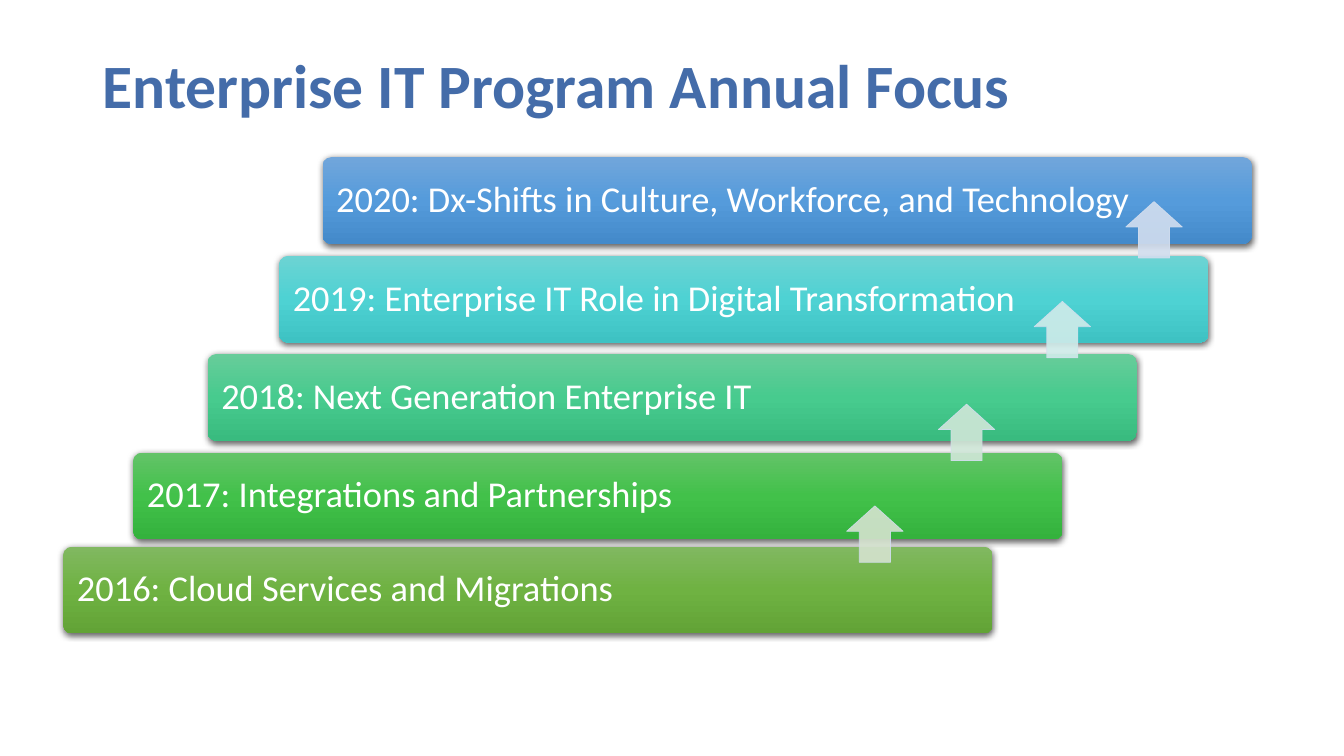
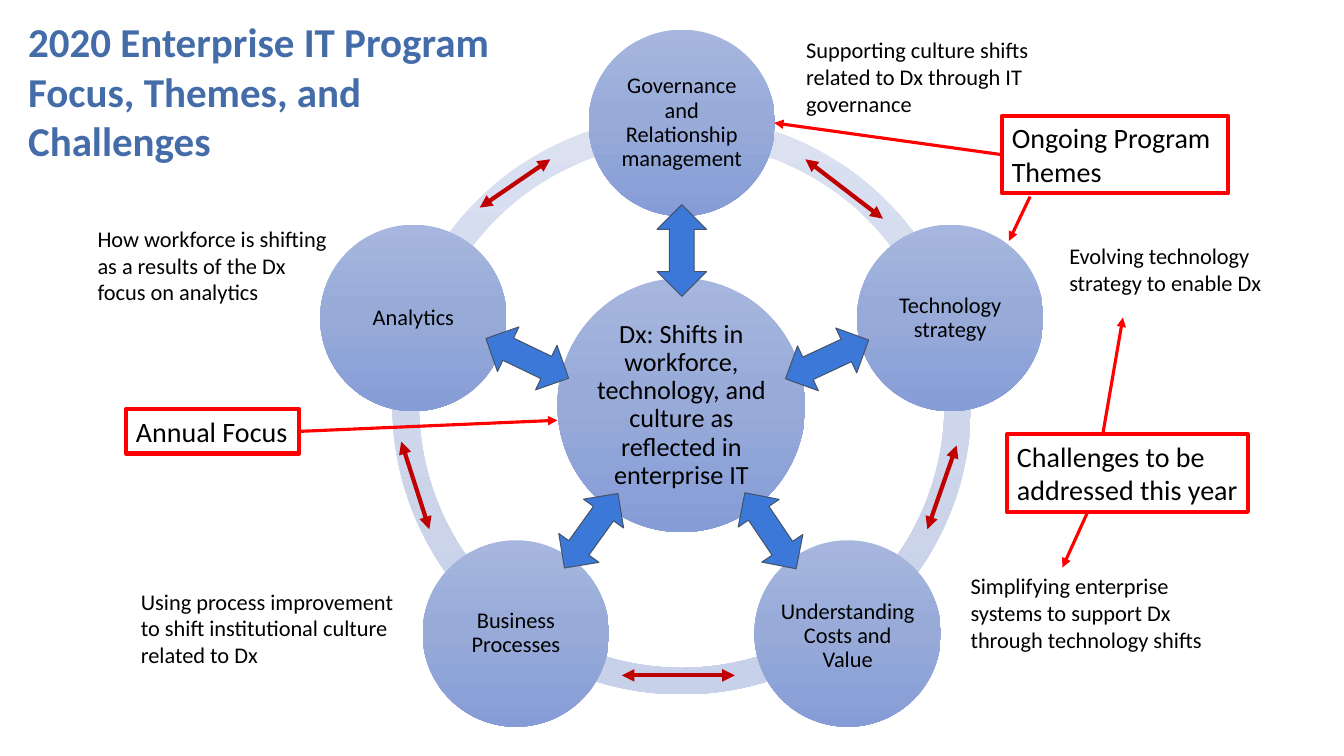
"""Build two slides on the enterprise IT program: annual focus, then themes and challenges."""
from dataclasses import dataclass
from math import cos, radians, sin
from typing import Any, NamedTuple, Optional

from lxml import etree
from pptx import Presentation
from pptx.dml.color import RGBColor
from pptx.enum.shapes import MSO_CONNECTOR, MSO_SHAPE
from pptx.enum.text import MSO_ANCHOR, PP_ALIGN
from pptx.oxml.ns import qn
from pptx.util import Pt

ROUNDED, OVAL, ARC = MSO_SHAPE.ROUNDED_RECTANGLE, MSO_SHAPE.OVAL, MSO_SHAPE.BLOCK_ARC
UP_ARROW, DOUBLE_ARROW = MSO_SHAPE.UP_ARROW, MSO_SHAPE.LEFT_RIGHT_ARROW
STRAIGHT = MSO_CONNECTOR.STRAIGHT
TOP, MIDDLE = MSO_ANCHOR.TOP, MSO_ANCHOR.MIDDLE
LEFT, CENTER = PP_ALIGN.LEFT, PP_ALIGN.CENTER
LEFT_SIDE, RIGHT_SIDE = 1, 3

Gradient = tuple[str, str, str]
Point = tuple[float, float]


@dataclass(frozen=True)
class Theme:
    """Colours and type sizes of the deck."""
    font: str = "Calibri"
    title: str = "446CA9"
    dark: str = "000000"
    light: str = "FFFFFF"
    ring: Gradient = ("DBE1F1", "CED6EB", "C7D1E9")
    circle: Gradient = ("A6B6DE", "97AAD8", "859CD6")
    spoke: str = "3C78D8"
    spoke_edge: str = "44546A"
    ring_arrow: str = "C00000"
    callout: str = "FF0000"
    step_edge: str = "D2DEEF"
    title_size: float = 44
    long_title_size: float = 29.3
    bar_size: float = 26
    callout_size: float = 20
    hub_size: float = 18.7
    body_size: float = 16


THEME = Theme()


class Frame(NamedTuple):
    """Left, top, width and height in points."""
    left: float
    top: float
    width: float
    height: float


@dataclass(frozen=True)
class TextStyle:
    """How a text is set inside its shape."""
    size: float
    color: str = THEME.dark
    bold: bool = False
    align: Any = LEFT
    anchor: Any = TOP
    spacing: float = 1.0
    inset_x: float = 7.2
    inset_y: float = 3.6
    wrap: bool = True


class Bar(NamedTuple):
    """One year of the staircase."""
    text: str
    left: float
    top: float
    colors: Gradient


class Step(NamedTuple):
    """An arrow leading up to the next year."""
    left: float
    top: float
    color: str


class Theme_(NamedTuple):
    """A program theme on the ring."""
    text: str
    label_width: float = 94.3
    label_drop: float = 0


class Spoke(NamedTuple):
    """A double arrow between the hub and a theme."""
    x: float
    y: float
    rotation: float


class Note(NamedTuple):
    """A free text beside a theme."""
    text: str
    frame: Frame


class Pointer(NamedTuple):
    """A callout arrow; side is the joined side of the box, if any."""
    start: Point
    end: Point
    side: Optional[int] = None


class Callout(NamedTuple):
    """A framed text with its arrows."""
    text: str
    frame: Frame
    pointers: list[Pointer]
    wrap: bool = True


BARS = [
    Bar("2020: Dx-Shifts in Culture, Workforce, and Technology", 230.4, 112.3, ("71A6DB", "559BDB", "448ACA")),
    Bar("2019: Enterprise IT Role in Digital Transformation", 199.4, 182.8, ("6CD3D3", "4ED2D3", "3EC2C3")),
    Bar("2018: Next Generation Enterprise IT", 148.3, 252.9, ("67CC9A", "47CB8E", "39BB7F")),
    Bar("2017: Integrations and Partnerships", 95.2, 323.3, ("63C368", "42C14A", "34B23D")),
    Bar("2016: Cloud Services and Migrations", 45.2, 390.5, ("81B861", "6FB242", "62A336")),
]
STEPS = [
    Step(804.2, 144, "D2DEEF"),
    Step(738.7, 215.3, "D0ECEA"),
    Step(670.3, 288.7, "D0E7D8"),
    Step(604.8, 361.4, "D5E3CF"),
]
RING_CENTER = (487, 289.4)
RING_SIZE, ORBIT, CIRCLE_SIZE = 413.3, 201.6, 133.2
ARC_START, ARC_SWEEP = 32.4, 43.2
HUB = Frame(398.2, 198.7, 177.1, 181.4)
HUB_LABEL = Frame(424.1, 225.4, 125.3, 128.2)
HUB_TEXT = "Dx: Shifts in workforce, technology, and culture as reflected in enterprise IT"
THEMES = [
    Theme_("Governance and Relationship management"),
    Theme_("Technology strategy"),
    Theme_("Understanding Costs and Value", 101.5, 2),
    Theme_("Business Processes"),
    Theme_("Analytics"),
]
RING_ARROWS: list[tuple[Point, Point]] = [
    ((575.3, 113.8), (630.7, 156.2)),
    ((683.3, 318.2), (662.4, 378)),
    ((342.7, 148.3), (393.1, 113.8)),
    ((286.6, 315.4), (306.7, 378)),
    ((444.2, 482.4), (524.9, 482.4)),
]
SPOKES = [
    Spoke(376.6, 256, 25.7),
    Spoke(487, 178.9, 90),
    Spoke(590.8, 256.7, 155),
    Spoke(550.4, 379.1, 236),
    Spoke(422.3, 379.1, 305.7),
]
NOTES = [
    Note("Evolving technology strategy to enable Dx", Frame(756.7, 169.2, 161.3, 57.6)),
    Note("Supporting culture shifts related to Dx through IT governance", Frame(568.8, 22.3, 187.9, 66.2)),
    Note("Simplifying enterprise systems to support Dx through technology shifts", Frame(686.2, 405.4, 203.8, 74.2)),
    Note("Using process improvement to shift institutional culture related to Dx", Frame(93.6, 416.2, 203.8, 66.2)),
    Note("How workforce is shifting as a results of the Dx focus on analytics", Frame(62.6, 157, 180.7, 72.7)),
]
CALLOUTS = [
    Callout("Ongoing Program Themes", Frame(715.7, 82.8, 161.3, 55.4), [
        Pointer((715.7, 110.5), (553, 87.8), LEFT_SIDE),
        Pointer((735.8, 140.4), (720.7, 172.1)),
    ]),
    Callout("Challenges to be addressed this year", Frame(719.3, 310.3, 172.1, 55.4), [
        Pointer((787.7, 310.3), (802.1, 226.8)),
        Pointer((776.9, 365.8), (758.9, 405.4)),
    ]),
    Callout("Annual Focus", Frame(90, 292.3, 123.8, 31.7), [
        Pointer((213.8, 308.2), (398.2, 300.2), RIGHT_SIDE),
    ], wrap=False),
]


def apply(target: Any, values: dict[str, Any]) -> None:
    """Set each named attribute on the target."""
    for name, value in values.items():
        setattr(target, name, value)


def add_node(parent: Any, tag: str, **attributes: Any) -> Any:
    """Append a DrawingML element."""
    return etree.SubElement(parent, qn(tag), {key: str(value) for key, value in attributes.items()})


def write(shape: Any, lines: list[str], style: TextStyle) -> None:
    """Fill a shape with one paragraph per line."""
    text_frame = shape.text_frame
    apply(text_frame, {
        "word_wrap": style.wrap, "vertical_anchor": style.anchor,
        "margin_left": Pt(style.inset_x), "margin_right": Pt(style.inset_x),
        "margin_top": Pt(style.inset_y), "margin_bottom": Pt(style.inset_y),
    })
    for index, line in enumerate(lines):
        para = text_frame.add_paragraph() if index else text_frame.paragraphs[0]
        apply(para, {"alignment": style.align, "line_spacing": style.spacing})
        span = para.add_run()
        span.text = line
        apply(span.font, {"name": THEME.font, "size": Pt(style.size), "bold": style.bold})
        span.font.color.rgb = RGBColor.from_string(style.color)


def add_text(page: Any, frame: Frame, lines: list[str], style: TextStyle) -> Any:
    """Add a text box."""
    box = page.shapes.add_textbox(*map(Pt, frame))
    write(box, lines, style)
    return box


def add_title(page: Any, frame: Frame, lines: list[str], size: float, anchor: Any, spacing: float) -> None:
    """Add the slide title."""
    add_text(page, frame, lines, TextStyle(size, THEME.title, True, anchor=anchor, spacing=spacing))


def add_shape(page: Any, kind: Any, frame: Frame, adjustments: tuple[float, ...] = ()) -> Any:
    """Add a preset shape without line or shadow."""
    shape = page.shapes.add_shape(kind, *map(Pt, frame))
    shape.shadow.inherit = False
    shape.line.fill.background()
    for index, value in enumerate(adjustments):
        shape.adjustments[index] = value
    return shape


def paint_solid(shape: Any, color: str, edge: str, width: float) -> None:
    """Give a shape a plain fill and line."""
    shape.fill.solid()
    shape.fill.fore_color.rgb = RGBColor.from_string(color)
    shape.line.color.rgb = RGBColor.from_string(edge)
    shape.line.width = Pt(width)


def paint_gradient(shape: Any, colors: Gradient) -> None:
    """Shade a shape from top to bottom."""
    shape.fill.gradient()
    shape.fill.gradient_angle = 270
    stops = shape.element.spPr.find(qn("a:gradFill")).find(qn("a:gsLst"))
    for stop in list(stops):
        stops.remove(stop)
    for index, color in enumerate(colors):
        add_node(add_node(stops, "a:gs", pos=index * 50000), "a:srgbClr", val=color)


def add_arrow(page: Any, start: Point, end: Point, color: str, width: float, ends: tuple[str, ...]) -> Any:
    """Add a straight line with the given arrowheads."""
    line = page.shapes.add_connector(STRAIGHT, *map(Pt, start + end))
    line.line.color.rgb = RGBColor.from_string(color)
    line.line.width = Pt(width)
    properties = line.element.spPr
    for tag in ends:
        add_node(properties.find(qn("a:ln")), tag, type="triangle")
    add_node(properties, "a:effectLst")
    return line


def draw_bar(page: Any, bar: Bar) -> None:
    """Draw one year of the staircase."""
    shape = add_shape(page, ROUNDED, Frame(bar.left, bar.top, 663.8, 61.9), (0.1,))
    paint_gradient(shape, bar.colors)
    effects = shape.element.spPr.find(qn("a:effectLst"))
    shadow = add_node(effects, "a:outerShdw", blurRad=Pt(4.5), dist=Pt(1.5), dir=5400000, algn="ctr", rotWithShape=0)
    add_node(add_node(shadow, "a:srgbClr", val=THEME.dark), "a:alpha", val=63000)
    write(shape, [bar.text], TextStyle(THEME.bar_size, THEME.light, anchor=MIDDLE, spacing=0.9, inset_x=8, inset_y=8))


def draw_step(page: Any, step: Step) -> None:
    """Draw a translucent arrow between two years."""
    arrow = add_shape(page, UP_ARROW, Frame(step.left, step.top, 40.3, 40.3), (0.55, 0.45))
    paint_solid(arrow, step.color, THEME.step_edge, 0.5)
    for color in arrow.element.spPr.iter(qn("a:srgbClr")):
        add_node(color, "a:alpha", val=90000)


def draw_circle(page: Any, frame: Frame, label: Frame, text: str, size: float) -> None:
    """Draw a shaded circle with its centred label."""
    paint_gradient(add_shape(page, OVAL, frame), THEME.circle)
    add_text(page, label, [text], TextStyle(size, align=CENTER, anchor=MIDDLE, spacing=0.9, inset_x=1.5, inset_y=1.5))


def around(x: float, y: float, width: float, height: float) -> Frame:
    """Return the frame of a given size centred on a point."""
    return Frame(x - width / 2, y - height / 2, width, height)


def draw_ring(page: Any) -> None:
    """Draw the ring, the hub and the themes."""
    center_x, center_y = RING_CENTER
    for index in range(5):
        start = ARC_START + index * ARC_SWEEP
        end = start + ARC_SWEEP if index < 4 else ARC_START
        arc = add_shape(page, ARC, around(center_x, center_y, RING_SIZE, RING_SIZE), (start * 0.6, end * 0.6, 0.046))
        paint_gradient(arc, THEME.ring)
    draw_circle(page, HUB, HUB_LABEL, HUB_TEXT, THEME.hub_size)
    for index, theme in enumerate(THEMES):
        angle = radians(index * 360 / len(THEMES) - 90)
        x, y = center_x + ORBIT * cos(angle), center_y + ORBIT * sin(angle)
        label = around(x, y + theme.label_drop, theme.label_width, 94.3)
        draw_circle(page, around(x, y, CIRCLE_SIZE, CIRCLE_SIZE), label, theme.text, THEME.body_size)


def draw_callout(page: Any, callout: Callout) -> None:
    """Draw a framed text and its arrows."""
    box = add_text(page, callout.frame, [callout.text], TextStyle(THEME.callout_size, wrap=callout.wrap))
    box.line.color.rgb = RGBColor.from_string(THEME.callout)
    box.line.width = Pt(3)
    for pointer in callout.pointers:
        arrow = add_arrow(page, pointer.start, pointer.end, THEME.callout, 2.25, ("a:tailEnd",))
        if pointer.side is not None:
            arrow.begin_connect(box, pointer.side)


def build_focus(page: Any) -> None:
    """Build the staircase of yearly focus."""
    add_title(page, Frame(66.2, 28.8, 828, 68.4), ["Enterprise IT Program Annual Focus"], THEME.title_size, MIDDLE, 0.9)
    for bar in BARS:
        draw_bar(page, bar)
    for step in STEPS:
        draw_step(page, step)


def build_themes(page: Any) -> None:
    """Build the ring of themes and challenges."""
    draw_ring(page)
    for start, end in RING_ARROWS:
        add_arrow(page, start, end, THEME.ring_arrow, 3, ("a:headEnd", "a:tailEnd"))
    for note in NOTES:
        add_text(page, note.frame, [note.text], TextStyle(THEME.body_size))
    lines = ["2020 Enterprise IT Program", "Focus, Themes, and Challenges"]
    add_title(page, Frame(13, 8.6, 378, 113), lines, THEME.long_title_size, TOP, 1.0)
    for spoke in SPOKES:
        arrow = add_shape(page, DOUBLE_ARROW, around(spoke.x, spoke.y, 65.5, 35.3))
        arrow.rotation = spoke.rotation
        paint_solid(arrow, THEME.spoke, THEME.spoke_edge, 0.75)
    for callout in CALLOUTS:
        draw_callout(page, callout)


def main() -> None:
    """Build and save the deck."""
    deck = Presentation()
    apply(deck, {"slide_width": Pt(960), "slide_height": Pt(540)})
    for build in (build_focus, build_themes):
        build(deck.slides.add_slide(deck.slide_layouts[6]))
    deck.save("out.pptx")


if __name__ == "__main__":
    main()
